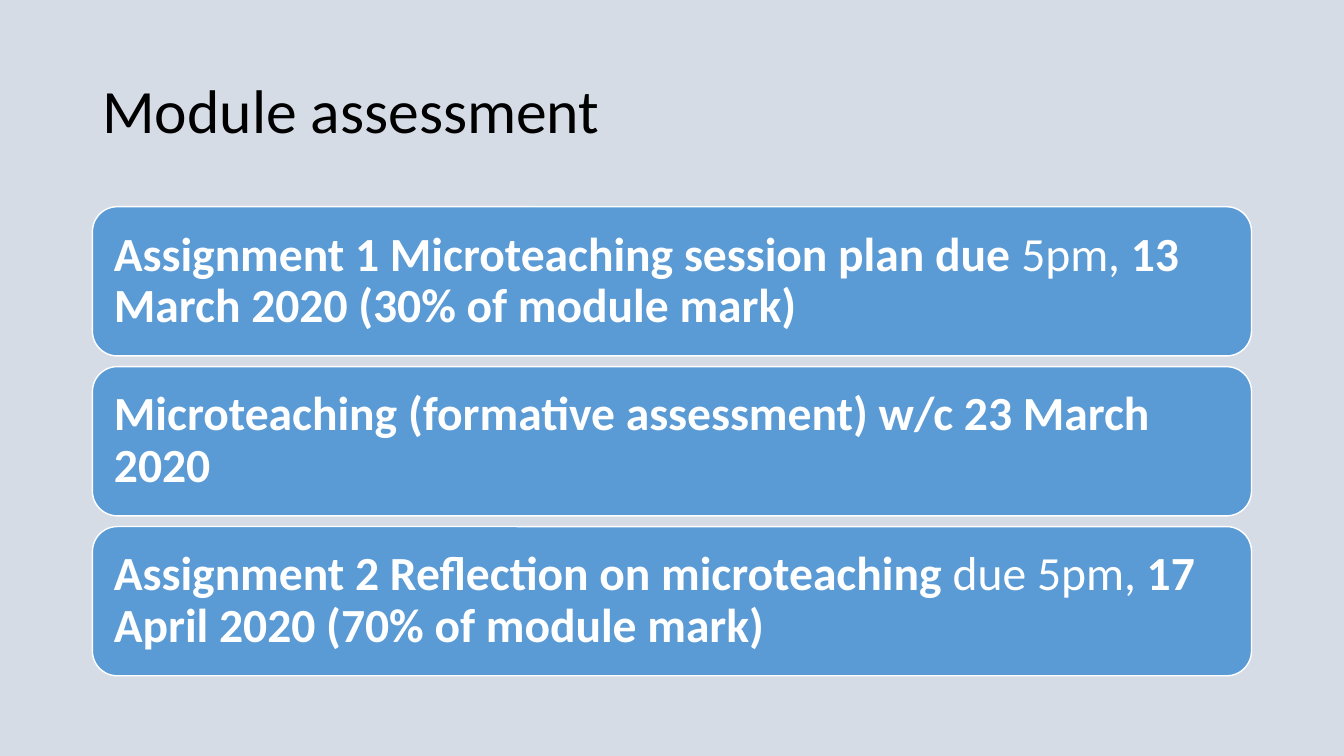
import pptx
import pptx.util
import pptx.dml.color
import pptx.enum.shapes
import pptx.enum.text

Cm = pptx.util.Cm
Pt = pptx.util.Pt

HEADING = "Module assessment"
ASSESSMENTS = [
    [("Assignment 1 Microteaching session plan due ", True),
     ("5pm, ", False),
     ("13 March 2020 (30% of module mark)", True)],
    [("Microteaching (formative assessment) w/c 23 March 2020", True)],
    [("Assignment 2 Reflection on microteaching", True),
     (" due 5pm, ", False),
     ("17 April 2020 (70% of module mark)", True)],
]
COLOURS = {"background": "D6DCE5", "heading": "000000",
           "bar": "5B9BD5", "bar_text": "FFFFFF", "outline": "FFFFFF"}
FONT = "Calibri"

LEFT, WIDTH = 2.33, 29.21
HEADING_TOP, HEADING_HEIGHT = 1.01, 3.68
BARS_TOP, BAR_HEIGHT, BAR_GAP = 5.21, 3.76, 0.27
BAR_INSET = 0.36


def colour(part):
    return pptx.dml.color.RGBColor.from_string(COLOURS[part])


def write(frame, pieces, size, part):
    frame.word_wrap = True
    frame.vertical_anchor = pptx.enum.text.MSO_ANCHOR.MIDDLE
    line = frame.paragraphs[0]
    line.alignment = pptx.enum.text.PP_ALIGN.LEFT
    line.line_spacing = 0.9
    for wording, bold in pieces:
        piece = line.add_run()
        piece.text = wording
        piece.font.name = FONT
        piece.font.size = Pt(size)
        piece.font.bold = bold
        piece.font.color.rgb = colour(part)


def add_bar(slide, top, pieces):
    bar = slide.shapes.add_shape(
        pptx.enum.shapes.MSO_SHAPE.ROUNDED_RECTANGLE,
        Cm(LEFT), Cm(top), Cm(WIDTH), Cm(BAR_HEIGHT))
    bar.shadow.inherit = False
    bar.fill.solid()
    bar.fill.fore_color.rgb = colour("bar")
    bar.line.color.rgb = colour("outline")
    bar.line.width = Pt(1)
    frame = bar.text_frame
    frame.margin_left = frame.margin_right = Cm(BAR_INSET)
    frame.margin_top = frame.margin_bottom = Cm(BAR_INSET)
    write(frame, pieces, 34, "bar_text")


def main():
    deck = pptx.Presentation()
    deck.slide_width, deck.slide_height = Cm(33.87), Cm(19.05)
    slide = deck.slides.add_slide(deck.slide_layouts[6])
    slide.background.fill.solid()
    slide.background.fill.fore_color.rgb = colour("background")

    heading = slide.shapes.add_textbox(
        Cm(LEFT), Cm(HEADING_TOP), Cm(WIDTH), Cm(HEADING_HEIGHT))
    write(heading.text_frame, [(HEADING, False)], 44, "heading")

    for row, pieces in enumerate(ASSESSMENTS):
        add_bar(slide, BARS_TOP + row * (BAR_HEIGHT + BAR_GAP), pieces)

    deck.save("out.pptx")


if __name__ == "__main__":
    main()
